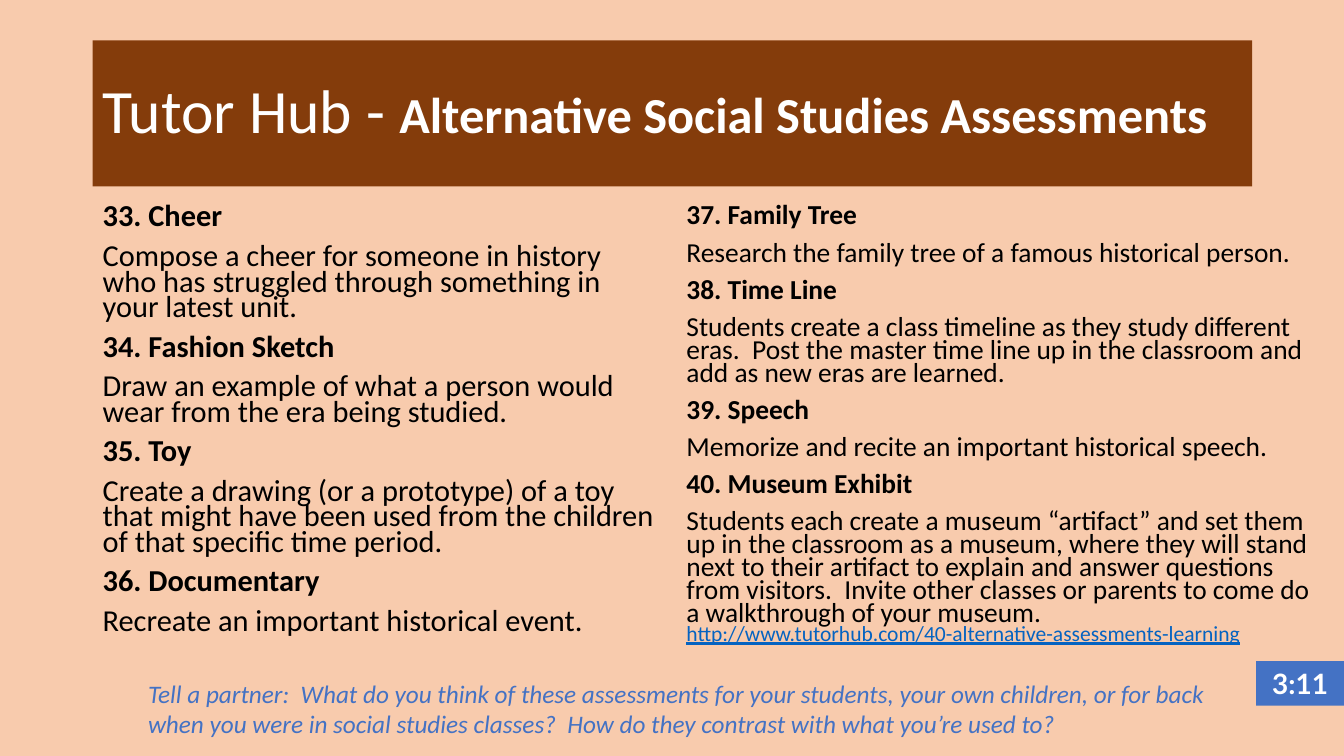
from dataclasses import dataclass
from pptx import Presentation
from pptx.dml.color import RGBColor
from pptx.enum.shapes import MSO_SHAPE
from pptx.enum.text import MSO_ANCHOR, PP_ALIGN
from pptx.util import Inches, Pt

RECT = MSO_SHAPE.RECTANGLE
TOP, MIDDLE = MSO_ANCHOR.TOP, MSO_ANCHOR.MIDDLE
LEFT, CENTER = PP_ALIGN.LEFT, PP_ALIGN.CENTER


@dataclass(frozen=True)
class Theme:
    peach: str = "F8CBAD"
    brown: str = "843C0B"
    blue: str = "4472C4"
    link: str = "0563C1"
    white: str = "FFFFFF"
    black: str = "000000"
    font: str = "Calibri"
    clock: str = "Lato"
    title: float = 44
    topic: float = 36
    left: float = 21.7
    right: float = 19.6
    url: float = 15.4
    prompt: float = 18
    time: float = 20


theme = Theme()


def add_box(place, fill=None, anchor=TOP):
    spot = [Inches(n) for n in place]
    if fill:
        box = slide.shapes.add_shape(RECT, *spot)
        box.shadow.inherit = False
        box.fill.solid()
        box.fill.fore_color.rgb = RGBColor.from_string(fill)
        box.line.fill.background()
    else:
        box = slide.shapes.add_textbox(*spot)
    frame = box.text_frame
    frame.word_wrap = True
    frame.vertical_anchor = anchor
    frame.paragraphs[0].alignment = LEFT
    return frame


def add_run(para, text, size, color, bold=False, italic=False, line=False, font=theme.font):
    run = para.add_run()
    run.text = text
    run.font.name = font
    run.font.size = Pt(size)
    run.font.color.rgb = RGBColor.from_string(color)
    run.font.bold = bold
    run.font.italic = italic
    run.font.underline = line


deck = Presentation()
deck.slide_width = Inches(13.33)
deck.slide_height = Inches(7.5)
slide = deck.slides.add_slide(deck.slide_layouts[6])
slide.background.fill.solid()
slide.background.fill.fore_color.rgb = RGBColor.from_string(theme.peach)

title = add_box((0.92, 0.4, 11.5, 1.45), theme.brown, MIDDLE).paragraphs[0]
title.line_spacing = 0.9
add_run(title, "Tutor Hub - ", theme.title, theme.white)
add_run(title, "Alternative Social Studies Assessments", theme.topic, theme.white, bold=True)

columns = [
    ((0.92, 2, 5.67, 4.69), theme.left, [
        ("33. Cheer", "Compose a cheer for someone in history who has struggled through something in your latest unit."),
        ("34. Fashion Sketch", "Draw an example of what a person would wear from the era being studied."),
        ("35. Toy", "Create a drawing (or a prototype) of a toy that might have been used from the children of that specific time period."),
        ("36. Documentary", "Recreate an important historical event."),
    ]),
    ((6.71, 2, 6.42, 4.69), theme.right, [
        ("37. Family Tree", "Research the family tree of a famous historical person."),
        ("38. Time Line", "Students create a class timeline as they study different eras.  Post the master time line up in the classroom and add as new eras are learned."),
        ("39. Speech", "Memorize and recite an important historical speech."),
        ("40. Museum Exhibit", "Students each create a museum “artifact” and set them up in the classroom as a museum, where they will stand next to their artifact to explain and answer questions from visitors.  Invite other classes or parents to come do a walkthrough of your museum."),
    ]),
]
for place, size, ideas in columns:
    frame = add_box(place)
    para = frame.paragraphs[0]
    for row, (name, task) in enumerate(ideas):
        for part, text in enumerate((name, task)):
            if row or part:
                para = frame.add_paragraph()
            para.line_spacing = 0.7
            para.space_before = Pt(10)
            add_run(para, text, size, theme.black, bold=part == 0)

para.add_line_break()
add_run(para, "http://www.tutorhub.com/40-alternative-assessments-learning", theme.url, theme.link, line=True)

prompt = add_box((1.37, 6.68, 10.9, 0.71)).paragraphs[0]
add_run(prompt, "Tell a partner:  What do you think of these assessments for your students, your own children, or for back when you were in social studies classes?  How do they contrast with what you’re used to?", theme.prompt, theme.blue, italic=True)

clock = add_box((12.46, 6.56, 0.87, 0.44), theme.blue).paragraphs[0]
clock.alignment = CENTER
add_run(clock, "3:11", theme.time, theme.white, bold=True, font=theme.clock)

deck.save("out.pptx")
